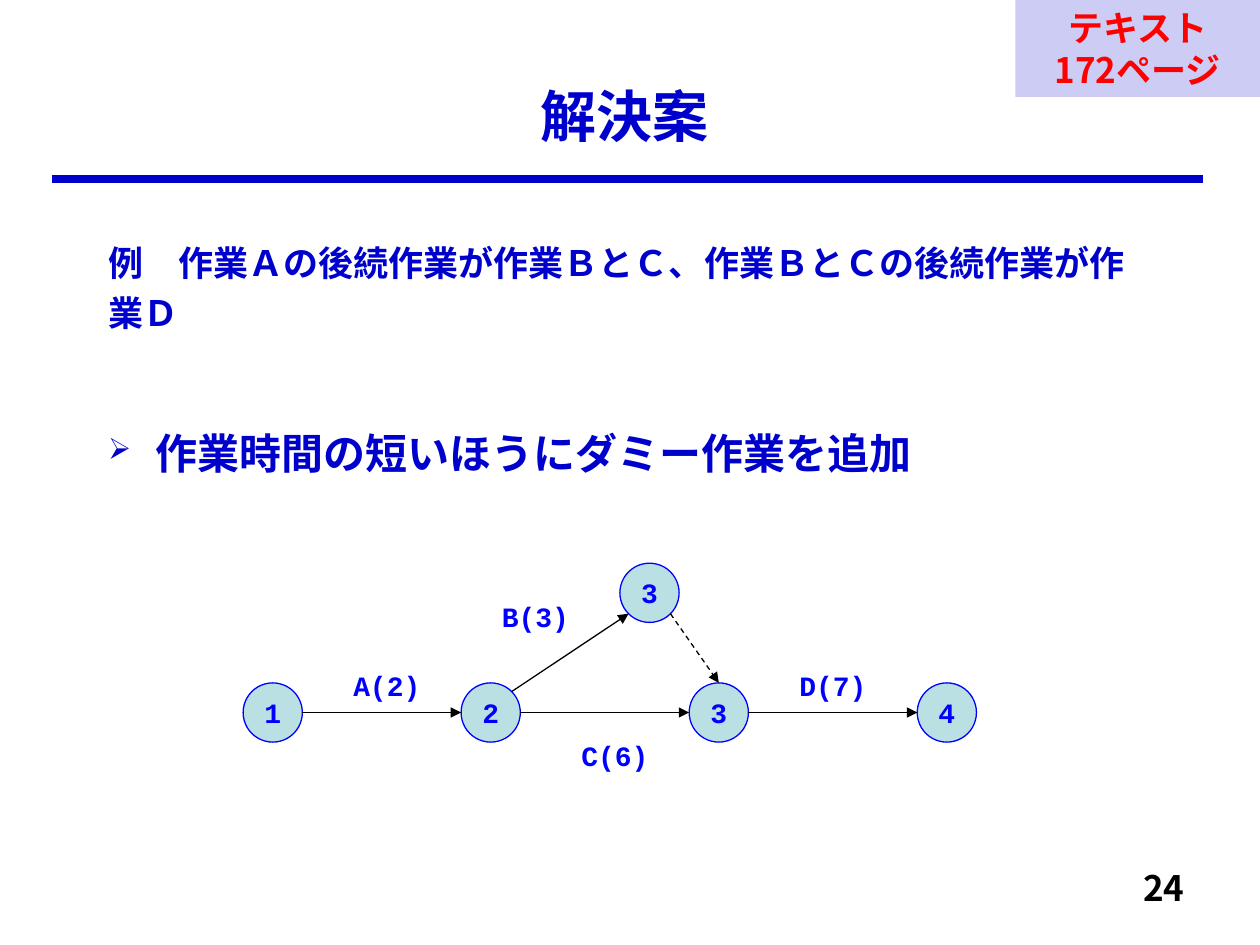
from math import cos, radians, sin

from lxml.etree import SubElement
from pptx import Presentation
from pptx.dml.color import RGBColor
from pptx.enum.dml import MSO_LINE_DASH_STYLE as Dash
from pptx.enum.shapes import MSO_CONNECTOR as Connector, MSO_SHAPE as Shape
from pptx.enum.text import MSO_ANCHOR as Anchor, PP_ALIGN as Align
from pptx.oxml.ns import qn
from pptx.util import Inches, Pt

colour = RGBColor.from_string
NAVY, BLUE, PALE, RED, BLACK = "0000CC", "0000FF", "BBE0E3", "FF0000", "000000"
GOTHIC, MONO = "Noto Sans CJK JP", "Courier New"

deck = Presentation()
deck.slide_width, deck.slide_height = Inches(10), Inches(7.5)
slide = deck.slides.add_slide(deck.slide_layouts[5])
shapes = slide.shapes


def cells(*units):
    """Grid of 100 columns by 75 rows with square cells."""
    return [round(unit * deck.slide_width / 100) for unit in units]


def write(holder, text, size, ink, font=GOTHIC, align=Align.CENTER):
    frame = holder.text_frame
    frame.text = text
    for paragraph in frame.paragraphs:
        paragraph.alignment = align
        for run in paragraph.runs:
            run.font.size, run.font.bold, run.font.name = Pt(size), True, font
            run.font.color.rgb = colour(ink)
            SubElement(run._r.get_or_add_rPr(), qn("a:ea"), typeface=font)
    return frame


# Title and the rule below it
title = shapes.title
title.left, title.top, title.width, title.height = cells(5.1, 5, 89, 8.3)
write(title, "解決案", 32, NAVY).vertical_anchor = Anchor.MIDDLE

rule = shapes.add_connector(Connector.STRAIGHT, *cells(4.1, 14.2, 95.5, 14.2))
rule.line.color.rgb, rule.line.width = colour(NAVY), Pt(4.5)
SubElement(rule._element.spPr, qn("a:effectLst"))

# Page number
page = shapes.add_textbox(*cells(74.2, 68.3, 20.8, 5))
write(page, "24", 20, BLACK, align=Align.RIGHT).paragraphs[0].line_spacing = Pt(24)

# Example and the proposed solution
body = shapes.add_textbox(*cells(4.8, 18, 91.4, 48.3))
body.left, body.width = cells(7.6, 83.6)
statement = write(
    body,
    "例\u3000作業Ａの後続作業が作業ＢとＣ、作業ＢとＣの後続作業が作業Ｄ\n"
    "作業時間の短いほうにダミー作業を追加".replace("\u3000", "　"),
    20, NAVY, align=Align.LEFT)
statement.word_wrap = True
example, solution = statement.paragraphs
example.line_spacing, example.space_before = Pt(28.8), Pt(4)
solution.line_spacing, solution.space_before = Pt(34.5), Pt(48)
solution.runs[0].font.size = Pt(24)
bullet = solution._p.get_or_add_pPr()
bullet.set("marL", str(Inches(0.38)))
bullet.set("indent", str(-Inches(0.38)))
SubElement(bullet, qn("a:buSzPct"), val="70000")
SubElement(bullet, qn("a:buChar"), char="➢")

# Event nodes: number, left, top
DIAMETER = 4.7
MAIN_ROW, UPPER_ROW = 54.2, 44.7
events = {
    "start": ("1", 19.3, MAIN_ROW),
    "branch": ("2", 36.6, MAIN_ROW),
    "dummy": ("3", 49.2, UPPER_ROW),
    "merge": ("3", 54.7, MAIN_ROW),
    "end": ("4", 72.8, MAIN_ROW),
}
for number, left, top in events.values():
    event = shapes.add_shape(Shape.OVAL, *cells(left, top, DIAMETER, DIAMETER))
    event.shadow.inherit = False
    event.fill.solid()
    event.fill.fore_color.rgb = colour(PALE)
    event.line.color.rgb, event.line.width = colour(BLUE), Pt(0.75)
    label = write(event, number, 16, BLUE, MONO)
    label.word_wrap, label.vertical_anchor = False, Anchor.MIDDLE

# Activities: from event and angle, to event and angle (clockwise from right)
activities = [
    ("start", 0, "branch", 180),
    ("branch", -45, "dummy", 135),
    ("branch", 0, "merge", 180),
    ("dummy", 45, "merge", -90),
    ("merge", 0, "end", 180),
]
for source, leave, target, arrive in activities:
    ends = []
    for name, angle in ((source, leave), (target, arrive)):
        number, left, top = events[name]
        ends += [left + DIAMETER / 2 * (1 + cos(radians(angle))),
                 top + DIAMETER / 2 * (1 + sin(radians(angle)))]
    activity = shapes.add_connector(Connector.STRAIGHT, *cells(*ends))
    activity.line.color.rgb, activity.line.width = colour(BLACK), Pt(0.75)
    if source == "dummy":
        activity.line.dash_style = Dash.DASH
    SubElement(activity.line._get_or_add_ln(), qn("a:tailEnd"), type="triangle")
    SubElement(activity._element.spPr, qn("a:effectLst"))

# Activity names with their durations
for duration, left, top in (("A(2)", 24, 52.6), ("B(3)", 35.8, 47.1),
                            ("C(6)", 42.1, 58.1), ("D(7)", 59.4, 52.6)):
    caption = shapes.add_textbox(*cells(left, top, 13.4, 3.7))
    write(caption, duration, 16, BLUE, MONO).word_wrap = True

# Textbook reference in the corner
reference = shapes.add_shape(Shape.RECTANGLE, *cells(80.6, 0, 19.4, 7.7))
reference.shadow.inherit = False
reference.fill.solid()
reference.fill.fore_color.rgb = colour(NAVY)
tint = reference._element.spPr.find(qn("a:solidFill"))[0]
SubElement(tint, qn("a:alpha"), val="20000")
reference.line.fill.background()
textbook = write(reference, "テキスト\n172ページ", 20, RED)
textbook.vertical_anchor = Anchor.TOP
for line in textbook.paragraphs:
    line.line_spacing = Pt(24)

deck.save("out.pptx")
